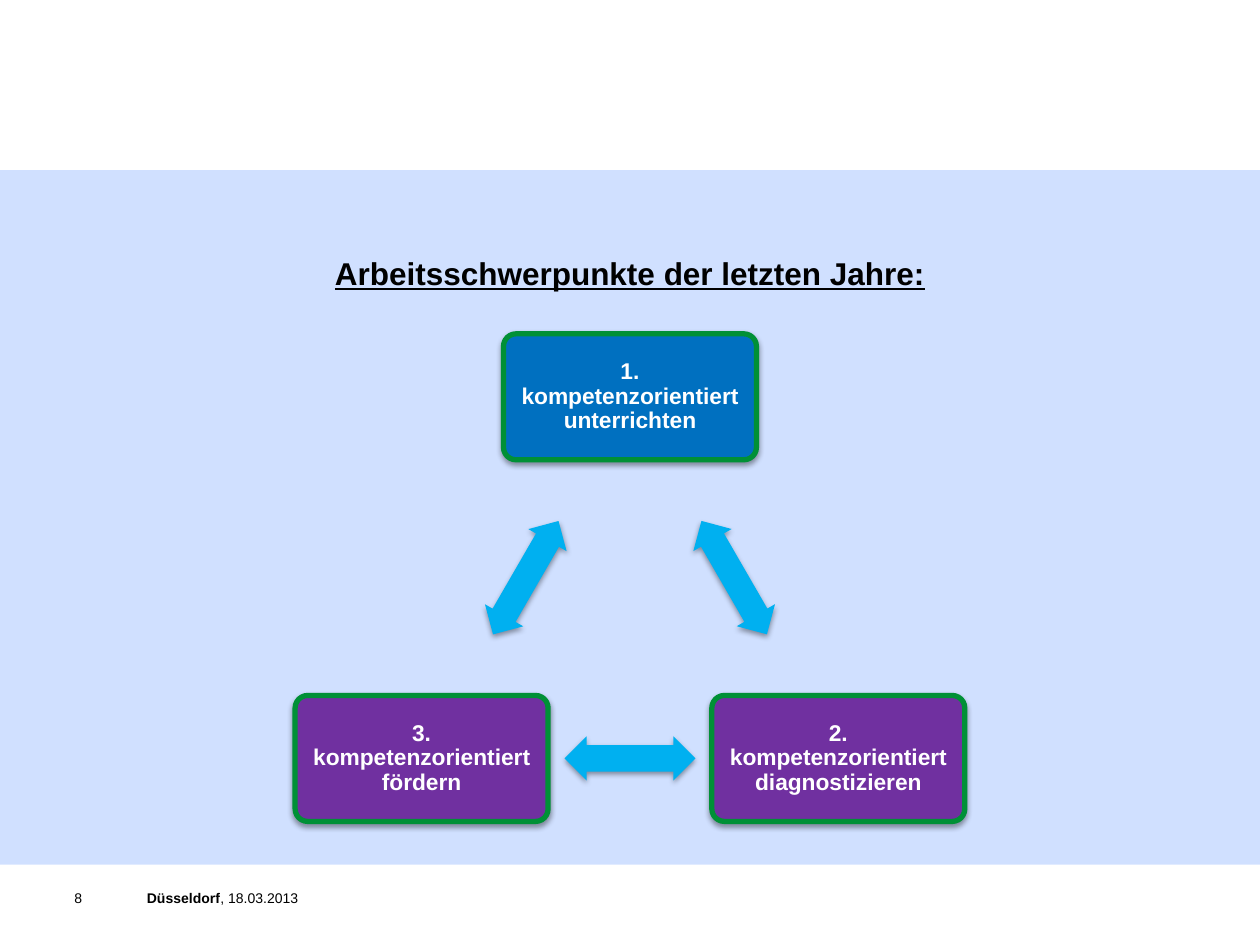
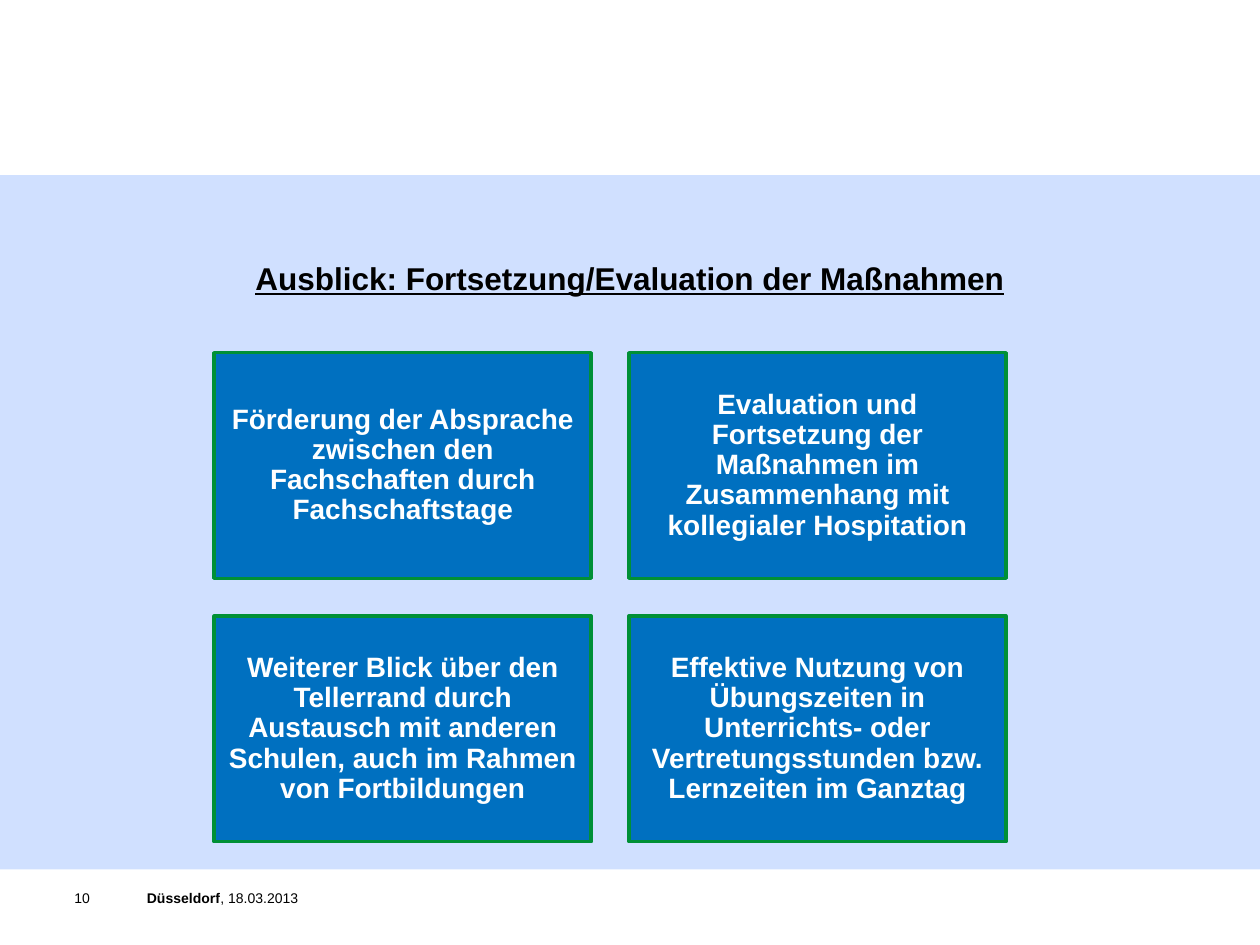
from pptx import Presentation
from pptx.dml.color import RGBColor
from pptx.enum.shapes import MSO_SHAPE as SHAPE
from pptx.enum.text import MSO_ANCHOR as ANCHOR, PP_ALIGN as ALIGN
from pptx.oxml import parse_xml
from pptx.oxml.ns import nsdecls, qn
from pptx.util import Cm, Pt

rgb = RGBColor.from_string
BLACK, WHITE = "000000", "FFFFFF"
BAND, BLUE, PURPLE, CYAN, GREEN = "6699FF", "0070C0", "7030A0", "00B0F0", "009036"
W, H = 25.4, 19.05
BAND_H = 14.0
SHADOW = (f'<a:outerShdw {nsdecls("a")} blurRad="40000" dist="20000" dir="5400000" '
          'rotWithShape="0"><a:srgbClr val="000000"><a:alpha val="38000"/>'
          '</a:srgbClr></a:outerShdw>')


def add_box(s, kind, x, y, w, h, fill, line_w=0, shadow=False):
    """Add a filled shape, outlined in green if line_w (points) is given."""
    sp = s.shapes.add_shape(kind, Cm(x), Cm(y), Cm(w), Cm(h))
    sp.fill.solid()
    sp.fill.fore_color.rgb = rgb(fill)
    if line_w:
        sp.line.color.rgb = rgb(GREEN)
        sp.line.width = Pt(line_w)
    else:
        sp.line.fill.background()
    sp.shadow.inherit = False
    if shadow:
        sp._element.spPr.find(qn("a:effectLst")).append(parse_xml(SHADOW))
    return sp


def write(sp, runs, size, color, align=ALIGN.CENTER, anchor=ANCHOR.MIDDLE,
          inset=0, top=None, spacing=None):
    """Fill a shape with one paragraph; runs holds (text, font values) pairs."""
    tf = sp.text_frame
    frame = {"word_wrap": True, "vertical_anchor": anchor,
             "margin_left": Cm(inset), "margin_right": Cm(inset),
             "margin_top": Cm(inset if top is None else top),
             "margin_bottom": Cm(inset)}
    for name, value in frame.items():
        setattr(tf, name, value)
    p = tf.paragraphs[0]
    p.alignment = align
    p.line_spacing = spacing
    for text, extra in runs:
        r = p.add_run()
        r.text = text
        r.font.color.rgb = rgb(color)
        for name, value in ({"name": "Arial", "size": Pt(size)} | extra).items():
            setattr(r.font, name, value)


prs = Presentation()
prs.slide_width, prs.slide_height = Cm(W), Cm(H)

# Band, title and footer on every slide
BOLD = {"bold": True}
pages = [("8", 3.43, "Arbeitsschwerpunkte der letzten Jahre:"),
         ("10", 3.53, "Ausblick: Fortsetzung/Evaluation der Maßnahmen")]
slides = []
for number, band_y, title in pages:
    s = prs.slides.add_slide(prs.slide_layouts[6])
    footer = [(1.5, 0.9, [(number, {})]),
              (2.96, 5.2, [("Düsseldorf", BOLD), (", 18.03.2013", {})])]
    for x, w, runs in footer:
        sp = s.shapes.add_textbox(Cm(x), Cm(17.93), Cm(w), Cm(0.94))
        write(sp, runs, 8, BLACK, ALIGN.LEFT, ANCHOR.TOP)
    band = add_box(s, SHAPE.RECTANGLE, 0, band_y, W, BAND_H, BAND)
    band_color = band._element.spPr.find(".//" + qn("a:srgbClr"))
    band_color.append(parse_xml(f'<a:alpha {nsdecls("a")} val="30000"/>'))
    write(band, [(title, BOLD | {"underline": True})], 18, BLACK,
          anchor=ANCHOR.TOP, top=1.69)
    slides.append(s)
cycle_slide, outlook_slide = slides

# Triangle of focus areas, with a double arrow in the middle of each side
BOX_W, BOX_H = 5.1, 2.54
ARROW_W, ARROW_H = 2.64, 0.89
MID, SIDE = W / 2, 4.2
TOP_Y, BASE_Y = 8.0, 15.29
areas = [(MID, TOP_Y, BLUE, "1. kompetenzorientiert unterrichten"),
         (MID + SIDE, BASE_Y, PURPLE, "2. kompetenzorientiert diagnostizieren"),
         (MID - SIDE, BASE_Y, PURPLE, "3. kompetenzorientiert fördern")]
for i, (cx, cy, fill, text) in enumerate(areas):
    sp = add_box(cycle_slide, SHAPE.ROUNDED_RECTANGLE, cx - BOX_W / 2, cy - BOX_H / 2,
                 BOX_W, BOX_H, fill, line_w=3, shadow=True)
    sp.adjustments[0] = 0.1
    write(sp, [(text, BOLD)], 13, WHITE, inset=0.13, spacing=0.9)

    next_x, next_y = areas[(i + 1) % len(areas)][:2]
    arrow = add_box(cycle_slide, SHAPE.LEFT_RIGHT_ARROW,
                    (cx + next_x - ARROW_W) / 2, (cy + next_y - ARROW_H) / 2,
                    ARROW_W, ARROW_H, CYAN, shadow=True)
    arrow.adjustments[0], arrow.adjustments[1] = 0.6, 0.5
    arrow.rotation = 60 + 120 * i

# Two-by-two grid of next steps
CARD_W, CARD_H, GAP = 7.6, 4.55, 0.76
GRID_X, GRID_Y = 4.32, 7.11
steps = [
    "Förderung der Absprache zwischen den Fachschaften durch Fachschaftstage",
    "Evaluation und Fortsetzung der Maßnahmen im Zusammenhang mit "
    "kollegialer Hospitation",
    "Weiterer Blick über den Tellerrand durch Austausch mit anderen Schulen, "
    "auch im Rahmen von Fortbildungen",
    "Effektive Nutzung von Übungszeiten in Unterrichts- oder "
    "Vertretungsstunden bzw. Lernzeiten im Ganztag",
]
for i, text in enumerate(steps):
    row, col = divmod(i, 2)
    sp = add_box(outlook_slide, SHAPE.RECTANGLE, GRID_X + col * (CARD_W + GAP),
                 GRID_Y + row * (CARD_H + GAP), CARD_W, CARD_H, BLUE, line_w=2)
    write(sp, [(text, BOLD)], 16, WHITE, inset=0.18, spacing=0.9)

prs.save("out.pptx")
